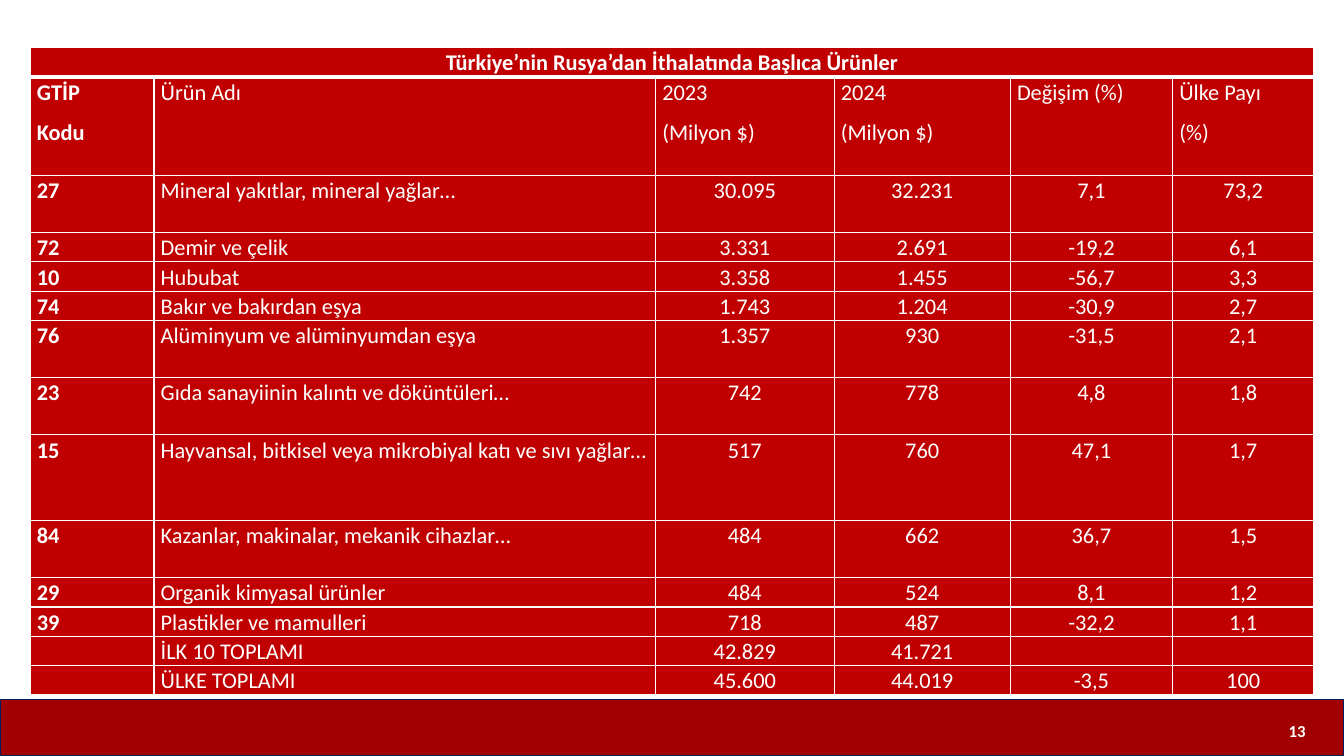
from dataclasses import dataclass

from lxml.etree import SubElement
from pptx import Presentation
from pptx.dml.color import RGBColor
from pptx.enum.shapes import MSO_SHAPE
from pptx.enum.text import MSO_ANCHOR, PP_ALIGN
from pptx.oxml.ns import qn
from pptx.util import Cm, Pt


@dataclass(frozen=True)
class Theme:
    """Colours, font and type sizes of the slide."""
    font: str = "Calibri"
    text: str = "FFFFFF"
    cell: str = "C00000"
    footer: str = "A00000"
    footer_line: str = "002060"
    border: str = "FFFFFF"
    table_size: int = 16
    number_size: int = 12


THEME = Theme()
ROW = 0.72
COLUMN_WIDTHS = [3.12, 12.64, 4.5, 4.44, 4.09, 3.56]
TITLE = "Türkiye’nin Rusya’dan İthalatında Başlıca Ürünler"
HEADINGS = ["GTİP\nKodu", "Ürün Adı", "2023\n(Milyon $)", "2024\n(Milyon $)",
            "Değişim (%)", "Ülke Payı\n(%)"]
PRODUCTS = [
    (2, "27", "Mineral yakıtlar, mineral yağlar…", "30.095", "32.231", "7,1", "73,2"),
    (1, "72", "Demir ve çelik", "3.331", "2.691", "-19,2", "6,1"),
    (1, "10", "Hububat", "3.358", "1.455", "-56,7", "3,3"),
    (1, "74", "Bakır ve bakırdan eşya", "1.743", "1.204", "-30,9", "2,7"),
    (2, "76", "Alüminyum ve alüminyumdan eşya", "1.357", "930", "-31,5", "2,1"),
    (2, "23", "Gıda sanayiinin kalıntı ve döküntüleri…", "742", "778", "4,8", "1,8"),
    (3, "15", "Hayvansal, bitkisel veya mikrobiyal katı ve sıvı yağlar…",
     "517", "760", "47,1", "1,7"),
    (2, "84", "Kazanlar, makinalar, mekanik cihazlar…", "484", "662", "36,7", "1,5"),
    (1, "29", "Organik kimyasal ürünler", "484", "524", "8,1", "1,2"),
    (1, "39", "Plastikler ve mamulleri", "718", "487", "-32,2", "1,1"),
    (1, "", "İLK 10 TOPLAMI", "42.829", "41.721", "", ""),
    (1, "", "ÜLKE TOPLAMI", "45.600", "44.019", "-3,5", "100"),
]


def write(frame, text, size, color, font, bold=False, align=PP_ALIGN.LEFT,
          line_spacing=None, space_after=None):
    """Write each line of text as a formatted paragraph."""
    for index, line in enumerate(text.split("\n")):
        paragraph = frame.add_paragraph() if index else frame.paragraphs[0]
        paragraph.alignment = align
        paragraph.line_spacing = line_spacing
        paragraph.space_after = space_after
        if not line:
            SubElement(paragraph._p, qn("a:endParaRPr"), sz=str(size * 100))
            continue
        run = paragraph.add_run()
        run.text = line
        run.font.name = font
        run.font.size = Pt(size)
        run.font.bold = bold
        run.font.color.rgb = RGBColor.from_string(color)


class SlideBuilder:
    """Draws styled elements on the current slide."""

    def __init__(self, slide, theme):
        self.slide = slide
        self.theme = theme

    def shape(self, kind, left, top, width, height, fill=None, line=None):
        """Add a preset shape with an optional fill and outline."""
        shape = self.slide.shapes.add_shape(
            kind, Cm(left), Cm(top), Cm(width), Cm(height))
        shape.shadow.inherit = False
        for part, color in ((shape.fill, fill), (shape.line.fill, line)):
            if color:
                part.solid()
                part.fore_color.rgb = RGBColor.from_string(color)
            else:
                part.background()
        if line:
            shape.line.width = Pt(1)
        return shape

    def page_number(self, number, left, top, width, height):
        """Add the page number tab."""
        tab = self.shape(MSO_SHAPE.ROUND_2_SAME_RECTANGLE, left, top, width, height)
        tab.text_frame.vertical_anchor = MSO_ANCHOR.MIDDLE
        write(tab.text_frame, number, self.theme.number_size, self.theme.text,
              self.theme.font, bold=True, align=PP_ALIGN.CENTER)

    def borders(self, cell, top=1, bottom=1):
        """Draw the four borders of a table cell."""
        properties = cell._tc.get_or_add_tcPr()
        for side, width in (("L", 1), ("R", 1), ("T", top), ("B", bottom)):
            line = SubElement(properties, qn(f"a:ln{side}"), w=str(Pt(width)))
            fill = SubElement(line, qn("a:solidFill"))
            SubElement(fill, qn("a:srgbClr"), val=self.theme.border)

    def cell(self, cell, text, bold=False, align=PP_ALIGN.LEFT, **border_widths):
        """Style and fill in one table cell."""
        self.borders(cell, **border_widths)
        cell.fill.solid()
        cell.fill.fore_color.rgb = RGBColor.from_string(self.theme.cell)
        cell.margin_left = cell.margin_right = Cm(0.17)
        cell.margin_top = cell.margin_bottom = 0
        write(cell.text_frame, text, self.theme.table_size, self.theme.text,
              self.theme.font, bold=bold, align=align,
              line_spacing=1.07, space_after=Pt(8))

    def table(self, left, top, widths, title, headings, products):
        """Add the import table with its title, headings and products."""
        heights = [ROW, 2.48] + [ROW * lines for lines, *_ in products]
        table = self.slide.shapes.add_table(
            len(heights), len(widths), Cm(left), Cm(top),
            Cm(sum(widths)), Cm(sum(heights))).table
        table.first_row = table.horz_banding = False
        for column, width in zip(table.columns, widths):
            column.width = Cm(width)
        for row, height in zip(table.rows, heights):
            row.height = Cm(height)
        table.cell(0, 0).merge(table.cell(0, len(widths) - 1))
        for index, heading in enumerate(headings):
            self.cell(table.cell(0, index), "" if index else title,
                      bold=True, align=PP_ALIGN.CENTER, bottom=3)
            self.cell(table.cell(1, index), heading, bold=index == 0, top=3)
        for row, (_, *values) in enumerate(products, start=2):
            for index, value in enumerate(values):
                self.cell(table.cell(row, index), value, bold=index == 0,
                          align=PP_ALIGN.CENTER if index > 1 else PP_ALIGN.LEFT)


def main():
    """Build the slide and save it."""
    deck = Presentation()
    deck.slide_width, deck.slide_height = Cm(33.87), Cm(19.05)
    builder = SlideBuilder(deck.slides.add_slide(deck.slide_layouts[6]), THEME)
    builder.shape(MSO_SHAPE.RECTANGLE, 0, 17.63, 33.87, 1.42,
                  fill=THEME.footer, line=THEME.footer_line)
    builder.page_number("13", 32.08, 17.63, 1.22, 1.5)
    builder.table(0.76, 1.2, COLUMN_WIDTHS, TITLE, HEADINGS, PRODUCTS)
    deck.save("out.pptx")


if __name__ == "__main__":
    main()
